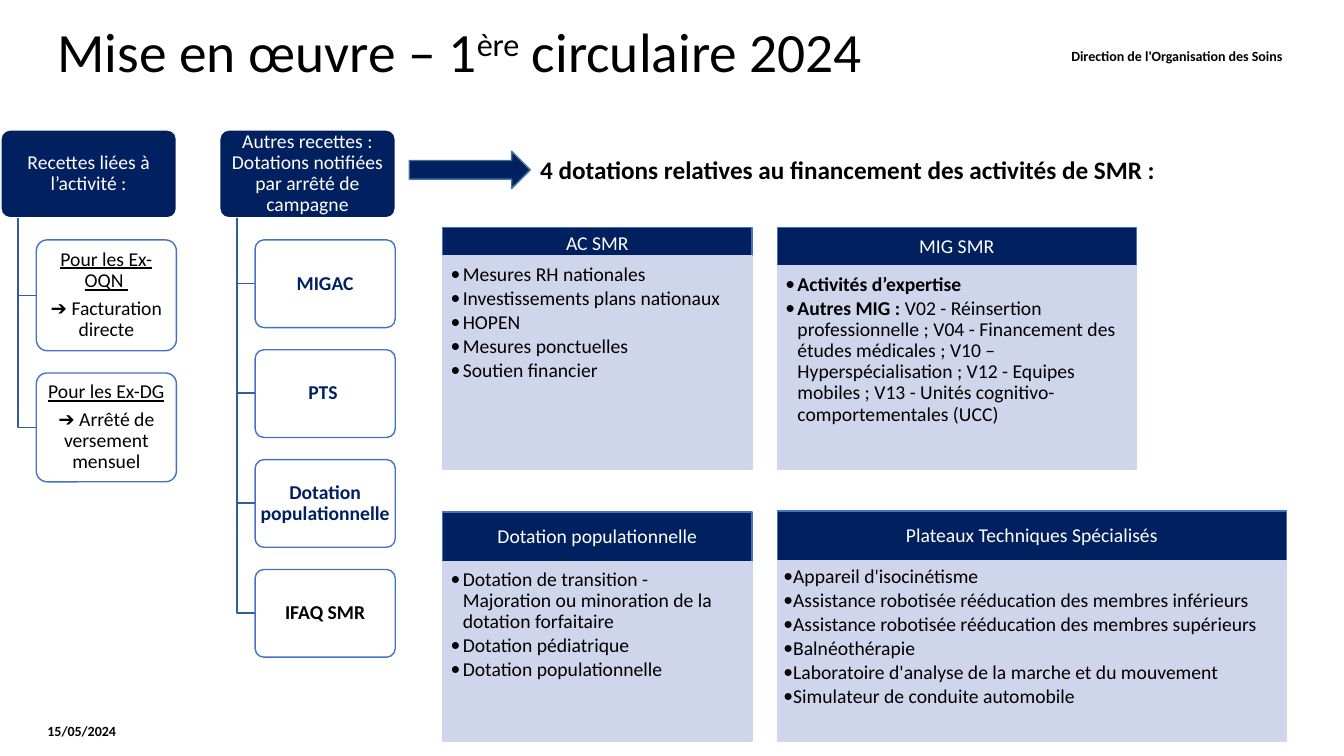
from lxml import etree
from pptx import Presentation, util as u
from pptx.dml.color import RGBColor
from pptx.enum import shapes, text
from pptx.oxml.ns import qn

PX = 9144  # 100 px to the inch
FONT = "Calibri"
COLORS = {
    "navy": "002060", "blue": "4472C4", "branch": "365B9D", "arrow_edge": "43739E",
    "panel": "CFD5EA", "white": "FFFFFF", "black": "000000",
}
CENTER, RIGHT = text.PP_ALIGN.CENTER, text.PP_ALIGN.RIGHT
MIDDLE, TOP = text.MSO_ANCHOR.MIDDLE, text.MSO_ANCHOR.TOP


def px(*lengths):
    return [u.Emu(length * PX) for length in lengths]


def rgb(name):
    return RGBColor.from_string(COLORS[name])


def paint(shape, fill, line):
    shape.shadow.inherit = False
    shape.fill.solid()
    shape.fill.fore_color.rgb = rgb(fill)
    shape.line.color.rgb = rgb(line)
    shape.line.width = u.Pt(1)


def set_frame(shape, insets, anchor):
    frame = shape.text_frame
    frame.word_wrap = True
    frame.vertical_anchor = anchor
    (frame.margin_left, frame.margin_top,
     frame.margin_right, frame.margin_bottom) = px(*insets)
    return frame


def format_paragraph(paragraph, size, color, bold=False, align=None, after=None):
    paragraph.alignment = align
    if after is not None:
        paragraph.line_spacing = 0.9
        paragraph.space_after = u.Pt(after)
    for run in paragraph.runs:
        run.font.name = FONT
        run.font.size = u.Pt(size)
        run.font.bold = bold
        run.font.color.rgb = rgb(color)


def add_label(slide, box, wording, size, bold=True, align=None, anchor=MIDDLE,
              insets=(0, 0, 0, 0)):
    frame = set_frame(slide.shapes.add_textbox(*px(*box)), insets, anchor)
    frame.text = wording
    format_paragraph(frame.paragraphs[0], size, "black", bold, align)
    return frame.paragraphs[0]


def add_title(slide, box):
    title = add_label(slide, box, "Mise en œuvre – 1", 39.6, False, insets=(10, 5, 10, 5))
    ordinal, rest = title.add_run(), title.add_run()
    ordinal.text, rest.text = "ère", " circulaire 2024"
    format_paragraph(title, 39.6, "black", after=0)
    ordinal.font._element.set("baseline", "30000")


def add_node(slide, box, wording, fill, line, color, bold=False):
    node = slide.shapes.add_shape(shapes.MSO_SHAPE.ROUNDED_RECTANGLE, *px(*box))
    node.adjustments[0] = 0.1
    paint(node, fill, line)
    frame = set_frame(node, (2, 2, 2, 2), MIDDLE)
    frame.text = wording
    for paragraph in frame.paragraphs:
        format_paragraph(paragraph, 14, color, bold, CENTER, 5)
    return frame


def add_branch(slide, trunk_x, top, end_x, end_y):
    builder = slide.shapes.build_freeform(trunk_x, top, scale=PX)
    builder.add_line_segments([(trunk_x, end_y), (end_x, end_y)], close=False)
    branch = builder.convert_to_shape()
    branch.shadow.inherit = False
    branch.fill.background()
    branch.line.color.rgb = rgb("branch")
    branch.line.width = u.Pt(1)


def add_tree(slide, box, heading, children):
    """Root box with children hanging below it, each (height, wording, color, bold)."""
    left, top, width, height = box
    bottom, gap, indent = top + height, 22, 35
    add_node(slide, box, heading, "navy", "white", "white")
    child_top = bottom + gap
    for child_height, wording, color, bold in children:
        add_branch(slide, left + 17, bottom, left + indent, child_top + child_height // 2)
        frame = add_node(slide, (left + indent, child_top, width - indent, child_height),
                         wording, "white", "blue", color, bold)
        if len(frame.paragraphs) > 1:
            frame.paragraphs[0].runs[0].font.underline = True
        child_top += child_height + gap


def add_panel(slide, box, head_height, body_offset, heading, items,
              insets=(8, 8, 11, 12), hang=12):
    """Headed panel; each item is a (bold part, plain part) bullet."""
    left, top, width, height = box
    head = slide.shapes.add_shape(shapes.MSO_SHAPE.RECTANGLE,
                                  *px(left, top, width, head_height))
    paint(head, "navy", "blue")
    head_frame = set_frame(head, (11, 6, 11, 6), MIDDLE)
    head_frame.text = heading
    format_paragraph(head_frame.paragraphs[0], 14, "white", align=CENTER, after=5)

    body = slide.shapes.add_shape(
        shapes.MSO_SHAPE.RECTANGLE,
        *px(left, top + body_offset, width, height - body_offset))
    paint(body, "panel", "panel")
    frame = set_frame(body, insets, TOP)
    for index, (strong, plain) in enumerate(items):
        bullet = frame.add_paragraph() if index else frame.paragraphs[0]
        for wording in filter(None, (strong, plain)):
            bullet.add_run().text = wording
        format_paragraph(bullet, 14, "black", align=text.PP_ALIGN.LEFT, after=2)
        if strong:
            bullet.runs[0].font.bold = True
        props = bullet._p.get_or_add_pPr()
        props.set("marL", str(hang * PX))
        props.set("indent", str(-hang * PX))
        etree.SubElement(props, qn("a:buFont")).set("typeface", FONT)
        etree.SubElement(props, qn("a:buChar")).set("char", "•")


def add_arrow(slide, box):
    arrow = slide.shapes.add_shape(shapes.MSO_SHAPE.RIGHT_ARROW, *px(*box))
    paint(arrow, "navy", "arrow_edge")


def plain_items(*wordings):
    return [("", wording) for wording in wordings]


def build_slide(slide):
    add_label(slide, (47, 700, 171, 50), "15/05/2024", 10)
    add_title(slide, (47, 29, 854, 51))
    add_label(slide, (418, 29, 857, 52), "Direction de l'Organisation des Soins ", 10,
              align=RIGHT)

    add_tree(slide, (1, 129, 174, 87), "Recettes liées à l’activité :", [
        (110, "Pour les Ex-OQN \n➔ Facturation directe", "black", False),
        (108, "Pour les Ex-DG\n➔ Arrêté de versement mensuel", "black", False),
    ])
    add_tree(slide, (218, 129, 174, 87),
             "Autres recettes : Dotations notifiées par arrêté de campagne", [
                 (87, "MIGAC", "navy", True),
                 (87, "PTS ", "navy", True),
                 (87, "Dotation populationnelle", "navy", True),
                 (87, "IFAQ SMR", "black", True),
             ])

    add_panel(slide, (771, 507, 505, 228), 49, 49, "Plateaux Techniques Spécialisés",
              plain_items("Appareil d'isocinétisme",
                          "Assistance robotisée rééducation des membres inférieurs",
                          "Assistance robotisée rééducation des membres supérieurs",
                          "Balnéothérapie",
                          "Laboratoire d'analyse de la marche et du mouvement",
                          "Simulateur de conduite automobile"),
              insets=(6, 6, 9, 10), hang=6)
    add_panel(slide, (439, 508, 307, 227), 49, 49, "Dotation populationnelle",
              plain_items("Dotation de transition - Majoration ou minoration "
                          "de la dotation forfaitaire",
                          "Dotation pédiatrique", "Dotation populationnelle"))
    add_panel(slide, (771, 226, 356, 240), 38, 38, "MIG SMR", [
        ("Activités d’expertise", ""),
        ("Autres MIG : ",
         "V02 - Réinsertion professionnelle ; V04 - Financement des études médicales ; "
         "V10 – Hyperspécialisation ; V12 - Equipes mobiles ; "
         "V13 - Unités cognitivo-comportementales (UCC)"),
    ])
    add_panel(slide, (439, 226, 307, 240), 33, 28, "AC SMR",
              plain_items("Mesures RH nationales", "Investissements plans nationaux",
                          "HOPEN", "Mesures ponctuelles", "Soutien financier"))

    add_arrow(slide, (406, 150, 120, 37))
    add_label(slide, (526, 148, 637, 40),
              "4 dotations relatives au financement des activités de SMR :", 18,
              anchor=TOP, insets=(10, 5, 10, 5))


def main():
    deck = Presentation()
    deck.slide_width, deck.slide_height = px(1333, 750)
    build_slide(deck.slides.add_slide(deck.slide_layouts[6]))
    deck.save("out.pptx")


if __name__ == "__main__":
    main()
